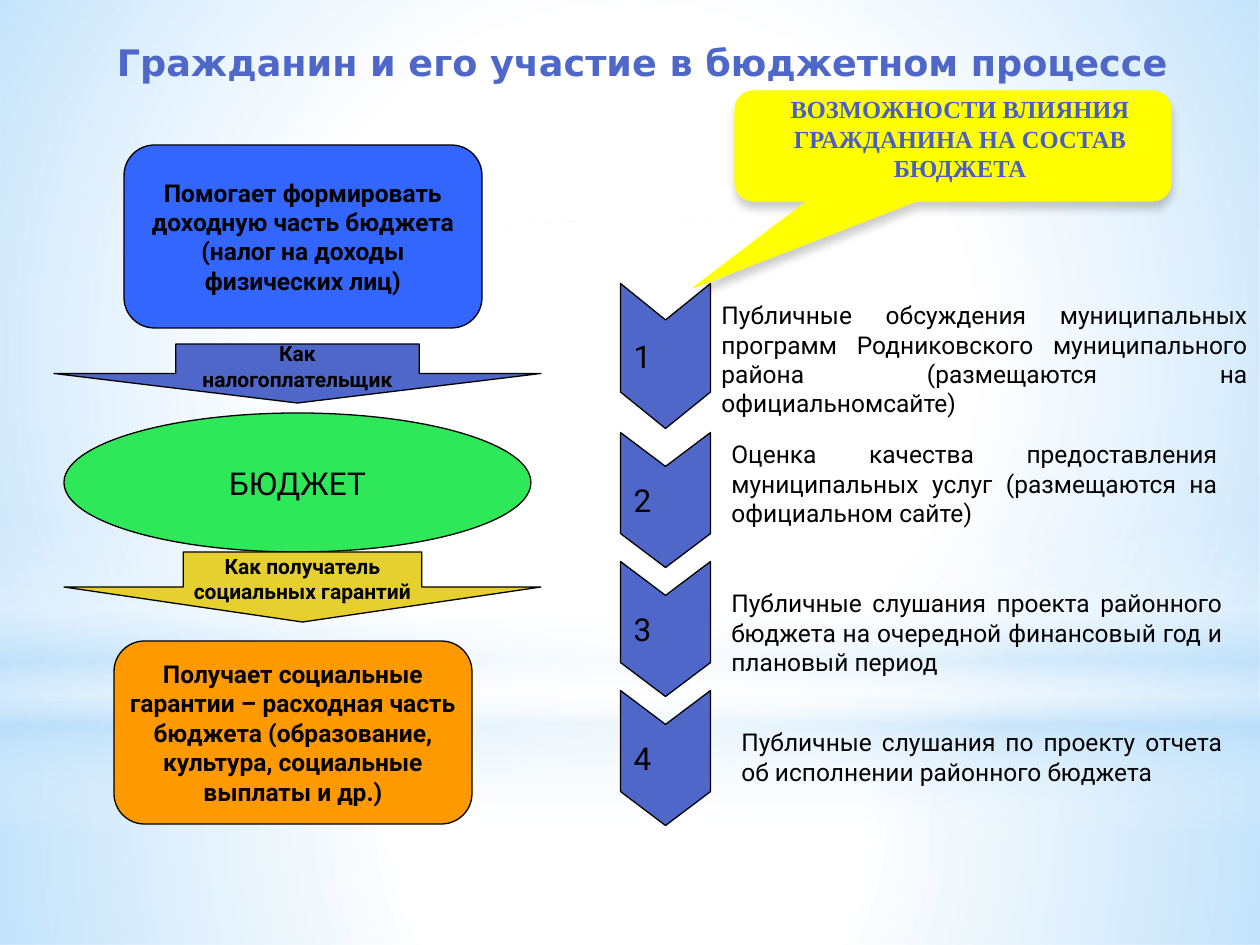
from dataclasses import dataclass

from lxml import etree
from pptx import Presentation
from pptx.dml.color import RGBColor
from pptx.enum.shapes import MSO_SHAPE
from pptx.enum.text import MSO_ANCHOR, PP_ALIGN
from pptx.oxml import parse_xml
from pptx.oxml.ns import nsdecls, qn
from pptx.util import Pt

PX = 914400 / 126
RECT, OVAL = MSO_SHAPE.RECTANGLE, MSO_SHAPE.OVAL
CHEVRON, DOWN_ARROW = MSO_SHAPE.CHEVRON, MSO_SHAPE.DOWN_ARROW
PROCESS = MSO_SHAPE.FLOWCHART_ALTERNATE_PROCESS
CALLOUT = MSO_SHAPE.ROUNDED_RECTANGULAR_CALLOUT
CENTER, LEFT, JUSTIFY = PP_ALIGN.CENTER, PP_ALIGN.LEFT, PP_ALIGN.JUSTIFY
MIDDLE, TOP = MSO_ANCHOR.MIDDLE, MSO_ANCHOR.TOP

BLACK, WHITE, SKY, BLUE = "000000", "FFFFFF", "B4DCFA", "4E67C8"
CIRCLE = ('<a:path path="circle"><a:fillToRect l="50000" t="50000" '
          'r="50000" b="50000"/></a:path>')
VERTICAL = '<a:lin ang="5400000" scaled="0"/>'


@dataclass
class Box:
    x: int
    y: int
    w: int
    h: int


@dataclass
class Glow:
    """Background shape; each stop is (position %, colour, opacity %)."""
    kind: int
    box: Box
    stops: list
    direction: str = CIRCLE


@dataclass
class Block:
    kind: int
    box: Box
    fill: str
    text: str
    size: int
    bold: bool = True


@dataclass
class Step:
    top: int
    height: int
    notch: float
    box: Box
    text: str


GLOWS = [
    Glow(RECT, Box(0, 703, 1260, 242), [(0, WHITE, 91), (37, WHITE, 76), (100, SKY, 79)]),
    Glow(RECT, Box(0, 0, 1260, 703), [(0, WHITE, 89), (48, WHITE, 62), (100, SKY, 79)]),
    Glow(RECT, Box(0, 519, 1260, 315),
         [(0, WHITE, 0), (29, WHITE, 30), (45, SKY, 40), (55, WHITE, 26),
          (65, SKY, 60), (100, WHITE, 0)], VERTICAL),
    Glow(OVAL, Box(0, 221, 1260, 703), [(0, WHITE, 100), (56, WHITE, 0), (100, WHITE, 0)]),
]
STEPS = [
    Step(284, 145, 0.405, Box(709, 294, 551, 138),
         "Публичные обсуждения муниципальных программ Родниковского "
         "муниципального района (размещаются на официальномсайте)"),
    Step(433, 135, 0.377, Box(719, 433, 511, 101),
         "Оценка качества предоставления муниципальных услуг "
         "(размещаются на официальном сайте)"),
    Step(562, 135, 0.377, Box(719, 582, 516, 101),
         "Публичные слушания проекта районного бюджета на очередной "
         "финансовый год и плановый период"),
    Step(691, 135, 0.377, Box(729, 721, 506, 72),
         "Публичные слушания по проекту отчета об исполнении районного бюджета"),
]
BLOCKS = [
    Block(OVAL, Box(64, 413, 467, 139), "2EE85A", "БЮДЖЕТ", 18, False),
    Block(DOWN_ARROW, Box(64, 552, 477, 70), "E6D030",
          "Как получатель\nсоциальных гарантий", 12),
    Block(DOWN_ARROW, Box(54, 344, 487, 59), BLUE, "Как\nналогоплательщик", 12),
    Block(PROCESS, Box(124, 145, 358, 183), "3366FF",
          "Помогает формировать\nдоходную часть бюджета\n"
          "(налог на доходы\nфизических лиц)", 14),
    Block(PROCESS, Box(114, 641, 358, 183), "FF9900",
          "Получает социальные\nгарантии – расходная часть\n"
          "бюджета (образование,\nкультура, социальные\nвыплаты и др.)", 14),
]


def rgb(value: str) -> RGBColor:
    return RGBColor.from_string(value)


def emu(box: Box) -> list[int]:
    return [round(v * PX) for v in (box.x, box.y, box.w, box.h)]


def add_shape(slide, kind, box: Box, fill: str, line: str = BLACK):
    sp = slide.shapes.add_shape(kind, *emu(box))
    sp.shadow.inherit = False
    sp.fill.solid()
    sp.fill.fore_color.rgb = rgb(fill)
    sp.line.color.rgb = rgb(line)
    sp.line.width = Pt(0.75)
    return sp


def write(sp, text: str, size: int, font: str = "Roboto", color: str = BLACK,
          bold: bool = False, align=CENTER, anchor=MIDDLE, wrap: bool = True):
    tf = sp.text_frame
    tf.text = text
    tf.word_wrap = wrap
    tf.vertical_anchor = anchor
    for p in tf.paragraphs:
        p.alignment = align
        for r in p.runs:
            r.font.name, r.font.size, r.font.bold = font, Pt(size), bold
            r.font.color.rgb = rgb(color)
    return tf


def add_text(slide, box: Box, text: str, size: int, **style):
    return write(slide.shapes.add_textbox(*emu(box)), text, size, anchor=TOP, **style)


def add_glow(slide, glow: Glow):
    sp = add_shape(slide, glow.kind, glow.box, WHITE)
    sp.line.fill.background()
    stops = "".join(
        f'<a:gs pos="{pos * 1000}"><a:srgbClr val="{color}">'
        f'<a:alpha val="{alpha * 1000}"/></a:srgbClr></a:gs>'
        for pos, color, alpha in glow.stops)
    grad = parse_xml(f'<a:gradFill {nsdecls("a")} rotWithShape="1">'
                     f'<a:gsLst>{stops}</a:gsLst>{glow.direction}</a:gradFill>')
    solid = sp._element.spPr.find(qn("a:solidFill"))
    solid.getparent().replace(solid, grad)


def add_callout(slide):
    sp = add_shape(slide, CALLOUT, Box(735, 91, 436, 110), "FFFF00", "FFFF00")
    for i, value in enumerate((-0.595, 1.288, 0.167)):
        sp.adjustments[i] = value
    effects = sp._element.spPr.find(qn("a:effectLst"))
    shadow = etree.SubElement(effects, qn("a:outerShdw"), blurRad=str(Pt(5)),
                              dist=str(Pt(4)), dir="5400000", rotWithShape="0")
    color = etree.SubElement(shadow, qn("a:srgbClr"), val=BLACK)
    etree.SubElement(color, qn("a:alpha"), val="20000")
    add_text(slide, Box(760, 88, 400, 102),
             "ВОЗМОЖНОСТИ ВЛИЯНИЯ\nГРАЖДАНИНА НА СОСТАВ БЮДЖЕТА", 14,
             font="Times New Roman", color="4A5EC6", bold=True)


def add_step(slide, number: int, step: Step):
    """Chevron turned to point down, with upright number, and its description."""
    width, center = 90, 665
    box = Box(center - step.height // 2, step.top + (step.height - width) // 2,
              step.height, width)
    sp = add_shape(slide, CHEVRON, box, BLUE)
    sp.rotation = 90
    sp.adjustments[0] = step.notch
    tf = write(sp, str(number), 18, align=LEFT)
    tf.margin_left = tf.margin_right = tf.margin_top = tf.margin_bottom = round(13 * PX)
    tf._txBody.bodyPr.set("vert", "vert270")
    add_text(slide, step.box, step.text, 14, align=JUSTIFY)


def main():
    prs = Presentation()
    prs.slide_width, prs.slide_height = round(1260 * PX), round(945 * PX)
    slide = prs.slides.add_slide(prs.slide_layouts[6])
    for glow in GLOWS:
        add_glow(slide, glow)
    title = add_text(slide, Box(25, 26, 1235, 110),
                     "Гражданин и его участие в бюджетном процессе", 36,
                     font="DejaVu Sans", color=BLUE, bold=True)
    title.paragraphs[0].runs[0].font._element.set("baseline", "30000")
    add_callout(slide)
    for number, step in enumerate(STEPS, 1):
        add_step(slide, number, step)
    for block in BLOCKS:
        sp = add_shape(slide, block.kind, block.box, block.fill)
        write(sp, block.text, block.size, bold=block.bold, wrap=False)
    prs.save("out.pptx")


if __name__ == "__main__":
    main()
